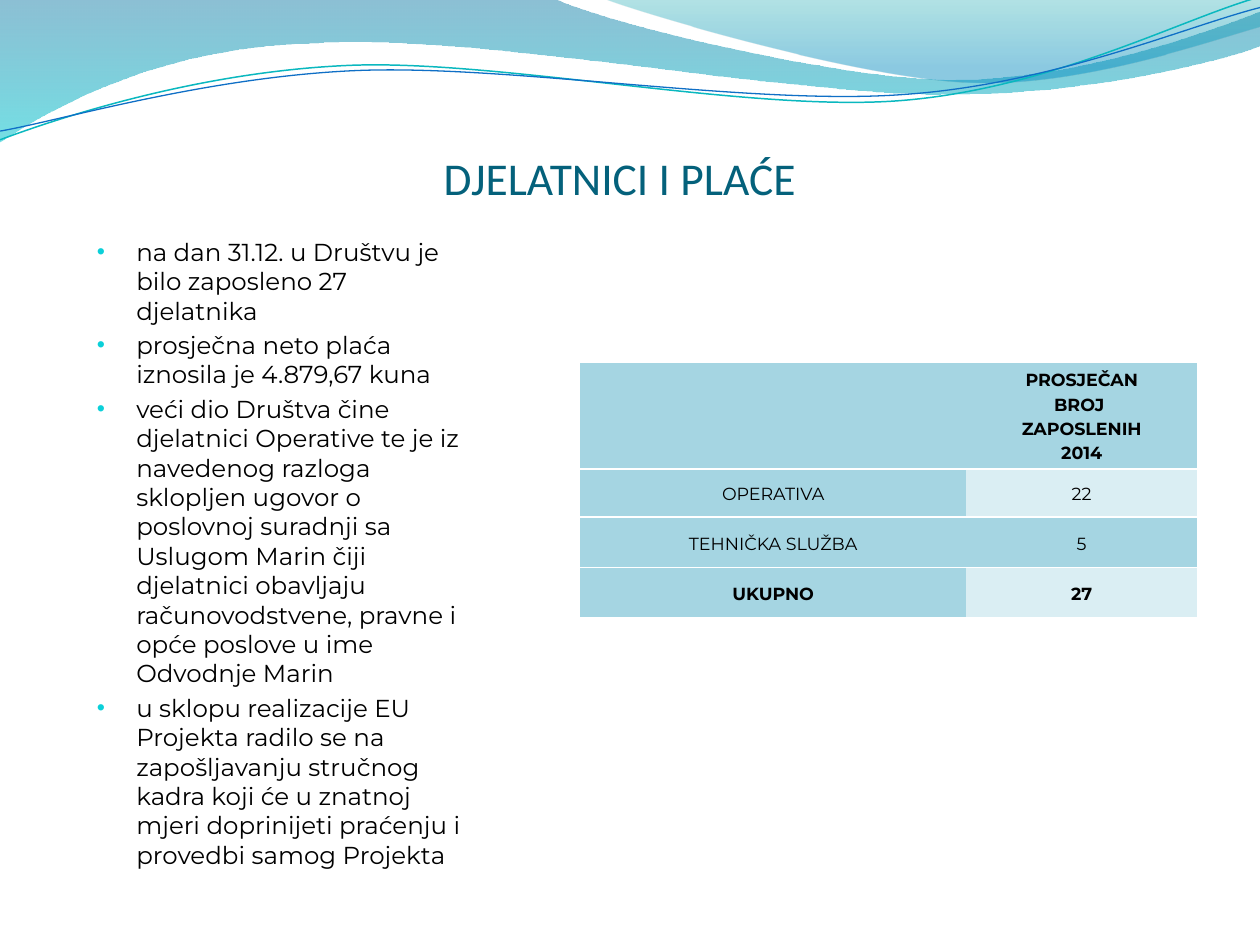
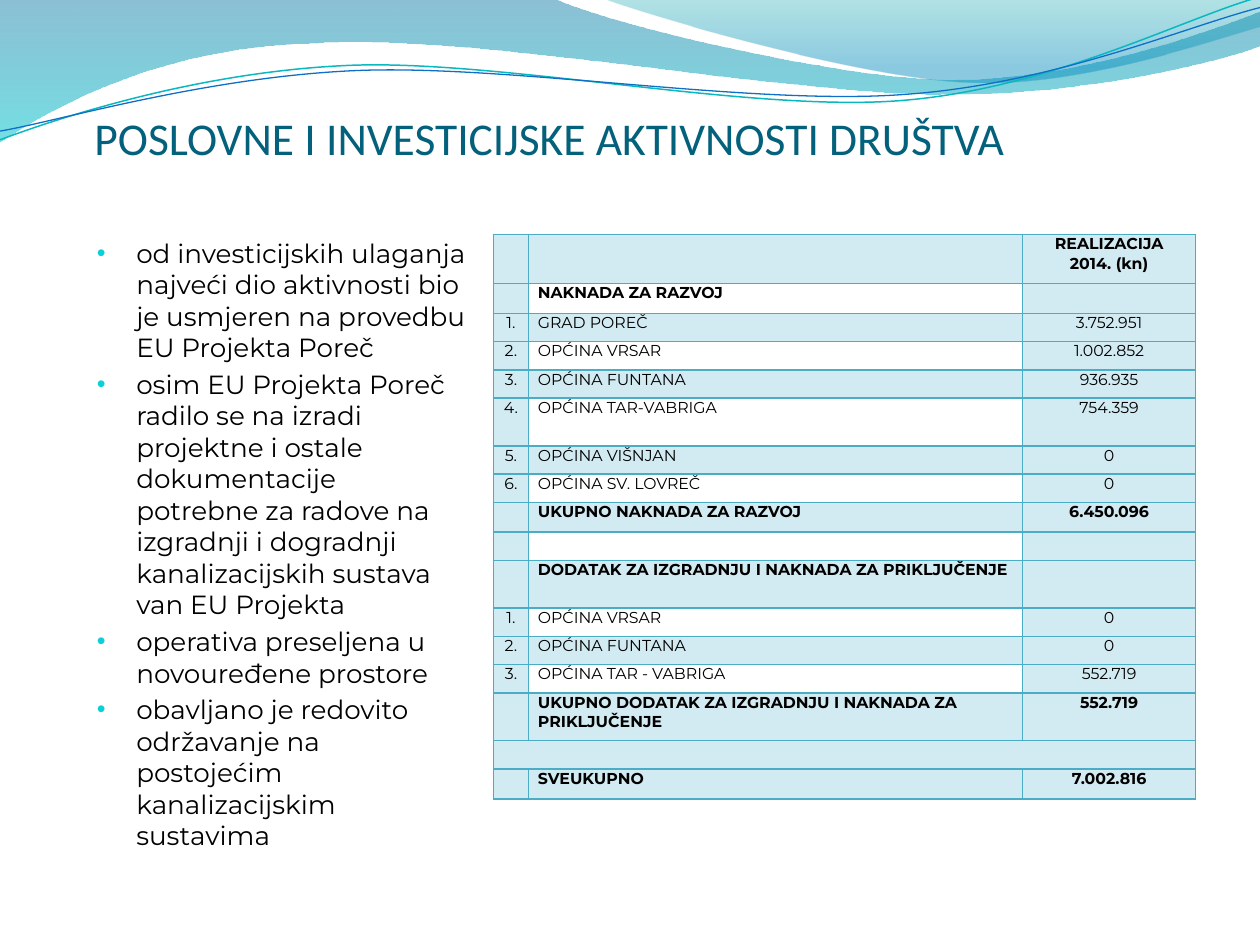
from lxml import etree
from pptx import Presentation
from pptx.dml.color import RGBColor
from pptx.enum import text
from pptx.oxml.ns import qn
from pptx.util import Pt

# ---- Shared style ----
COLORS = {
    "title": "04617B", "text": "000000", "bullet": "0BD0D9",
    "teal line": "0AB8BF", "blue line": "0F6FC6", "white": "FFFFFF",
    "staff dark": "A5D5E2", "staff light": "DAEEF3",
    "fees fill": "D2EAF1", "fees border": "4BACC6",
}
TITLE_FONT, BODY_FONT = "Calibri", "Montserrat"
CENTER, LEFT = text.PP_ALIGN.CENTER, text.PP_ALIGN.LEFT
TOP, MIDDLE, BOTTOM = text.MSO_ANCHOR.TOP, text.MSO_ANCHOR.MIDDLE, text.MSO_ANCHOR.BOTTOM
NO_STYLE = "{2D5ABB26-0587-4C30-8999-92F81FD0307C}"

# Waves: a start point, then straight (x, y) or cubic (x1, y1, x2, y2, x, y) steps
BANDS = [
    ([(0, 0), (316.8, -0.7), (342.7, 12.2, 478.1, 45.4, 545.8, 45.4),
      (614.2, 45.4, 689.8, 18.7, 720, 6.5), (720.7, 25.9),
      (707.8, 31.7, 626.4, 54.7, 537.1, 54), (447.8, 54, 275, 20.2, 185, 24.5),
      (92.9, 25.9, 33.1, 59.8, -0.7, 81.4)],
     [(0, "0074A1", 45), (1, "00C6CF", 55)]),
    ([(344.9, -0.7), (366.5, 7.9, 491, 44.6, 553.7, 46.8),
      (616.3, 49.7, 691.9, 23, 720, 15.1), (720, 0)],
     [(0, "00A1A9", 30), (0.8, "008BBF", 45)]),
]
LINES = [
    ([(0, 79.9), (34.6, 67, 113.8, 41, 199.4, 37.4),
      (284.4, 33.8, 427, 64.1, 513.4, 57.6), (599.8, 51.1, 675.4, 10.8, 718.6, -1.4)],
     "teal line", 0.85),
    ([(0, 74.9), (33.8, 69.1, 118.1, 43.9, 203.8, 40.3),
      (290.2, 36.7, 429.8, 60.5, 516.2, 54), (601.9, 48.2, 677.5, 15.1, 720, 4.3)],
     "blue line", 0.75),
]

# ---- Content ----
STAFF_TITLE = "DJELATNICI I PLAĆE"
STAFF_POINTS = [
    "na dan 31.12. u Društvu je bilo zaposleno 27 djelatnika",
    "prosječna neto plaća iznosila je 4.879,67 kuna",
    "veći dio Društva čine djelatnici Operative te je iz navedenog razloga sklopljen "
    "ugovor o poslovnoj suradnji sa Uslugom Marin čiji djelatnici obavljaju "
    "računovodstvene, pravne i opće poslove u ime Odvodnje Marin",
    "u sklopu realizacije EU Projekta radilo se na zapošljavanju stručnog kadra koji će "
    "u znatnoj mjeri doprinijeti praćenju i provedbi samog Projekta",
]
STAFF_ROWS = [  # height, bold, cells
    (60.8, True, ("", "PROSJEČAN\nBROJ \vZAPOSLENIH\n2014")),
    (27.6, False, ("OPERATIVA", "22")),
    (28.8, False, ("TEHNIČKA SLUŽBA", "5")),
    (28.8, True, ("UKUPNO", "27")),
]

FEES_TITLE = "POSLOVNE I INVESTICIJSKE AKTIVNOSTI DRUŠTVA"
FEES_POINTS = [
    "od investicijskih ulaganja najveći dio aktivnosti bio je usmjeren na provedbu "
    "EU Projekta Poreč",
    "osim EU Projekta Poreč radilo se na izradi projektne i ostale dokumentacije\v"
    "potrebne za radove na izgradnji i dogradnji kanalizacijskih sustava van EU Projekta",
    "operativa preseljena u novouređene prostore",
    "obavljano je redovito održavanje na postojećim kanalizacijskim sustavima",
]
ROW, SUM_ROW, TALL_ROW = 16.15, 17.1, 27.3
FEES_ROWS = [
    (28, True, ("", "", "REALIZACIJA 2014. (kn)")),
    (SUM_ROW, True, ("", "NAKNADA ZA RAZVOJ", "")),
    (ROW, False, ("1.", "GRAD POREČ", "3.752.951")),
    (ROW, False, ("2.", "OPĆINA VRSAR", "1.002.852")),
    (ROW, False, ("3.", "OPĆINA FUNTANA", "936.935")),
    (TALL_ROW, False, ("4.", "OPĆINA TAR-VABRIGA", "754.359")),
    (ROW, False, ("5.", "OPĆINA VIŠNJAN", "0")),
    (ROW, False, ("6.", "OPĆINA SV. LOVREČ", "0")),
    (SUM_ROW, True, ("", "UKUPNO NAKNADA ZA RAZVOJ", "6.450.096")),
    (ROW, False, ("", "", "")),
    (TALL_ROW, True, ("", "DODATAK ZA IZGRADNJU I NAKNADA ZA PRIKLJUČENJE", "")),
    (ROW, False, ("1.", "OPĆINA VRSAR", "0")),
    (ROW, False, ("2.", "OPĆINA FUNTANA", "0")),
    (ROW, False, ("3.", "OPĆINA TAR - VABRIGA", "552.719")),
    (TALL_ROW, True, ("", "UKUPNO DODATAK ZA IZGRADNJU I NAKNADA ZA PRIKLJUČENJE", "552.719")),
    (ROW, False, ("", "", "")),
    (SUM_ROW, True, ("", "SVEUKUPNO", "7.002.816")),
]
FEES_GAP_ROW = 15  # one cell across the whole table


# ---- Helpers ----
def rgb(name):
    return RGBColor.from_string(COLORS[name])


def add_wave(s, steps, close):
    """Freeform through the end points, with the cubic steps then bent."""
    start, *rest = [(Pt(step[-2]), Pt(step[-1])) for step in steps]
    builder = s.shapes.build_freeform(*start)
    builder.add_line_segments(rest, close=close)
    sp = builder.convert_to_shape()
    sp.shadow.inherit = False
    segments = list(sp.element.spPr.iter(qn("a:lnTo")))
    for segment, step in zip(segments, steps[1:]):
        if len(step) == 6:
            curve = etree.Element(qn("a:cubicBezTo"))
            for x, y in zip(step[::2], step[1::2]):
                etree.SubElement(curve, qn("a:pt"),
                                 x=str(Pt(x) - sp.left), y=str(Pt(y) - sp.top))
            segment.getparent().replace(segment, curve)
    return sp


def add_waves(s):
    for steps, stops in BANDS:
        sp = add_wave(s, steps, True)
        sp.line.fill.background()
        sp.fill.gradient()
        sp.fill.gradient_angle = 270
        for stop, (position, color, _) in zip(sp.fill.gradient_stops, stops):
            stop.position = position
            stop.color.rgb = RGBColor.from_string(color)
        for clr, (_, _, opacity) in zip(sp.element.spPr.iter(qn("a:srgbClr")), stops):
            etree.SubElement(clr, qn("a:alpha"), val=str(opacity * 1000))
    for steps, color, width in LINES:
        sp = add_wave(s, steps, False)
        sp.fill.background()
        sp.line.color.rgb = rgb(color)
        sp.line.width = Pt(width)


def set_insets(target, left, top, right, bottom):
    target.margin_left, target.margin_top = Pt(left), Pt(top)
    target.margin_right, target.margin_bottom = Pt(right), Pt(bottom)


def style_runs(p, font, size, color="text", bold=False):
    for r in p.runs:
        r.font.name, r.font.size, r.font.bold = font, Pt(size), bold
        r.font.color.rgb = rgb(color)


def add_text(s, box, content, insets, anchor):
    tf = s.shapes.add_textbox(*map(Pt, box)).text_frame
    tf.word_wrap = True
    tf.vertical_anchor = anchor
    set_insets(tf, *insets)
    tf.text = content
    return tf.paragraphs


def add_title(s, title, box, align):
    p = add_text(s, box, title, (0, 3.6, 0, 0), BOTTOM)[0]
    p.alignment = align
    style_runs(p, TITLE_FONT, 26, "title")


def add_points(s, points, size):
    for p in add_text(s, (54, 131.8, 216, 360), "\n".join(points),
                      (1.4, 3.6, 1.4, 3.6), TOP):
        p.space_before = Pt(size / 5)
        style_runs(p, BODY_FONT, size)
        pPr = p._p.get_or_add_pPr()
        pPr.set("marL", str(Pt(22.5)))
        pPr.set("indent", str(-Pt(22.5)))
        clr = etree.SubElement(pPr, qn("a:buClr"))
        etree.SubElement(clr, qn("a:srgbClr"), val=COLORS["bullet"])
        etree.SubElement(pPr, qn("a:buSzPct"), val="95000")
        etree.SubElement(pPr, qn("a:buFont"), typeface="Arial")
        etree.SubElement(pPr, qn("a:buChar"), char="•")


def set_borders(cell, sides, color):
    tcPr = cell._tc.get_or_add_tcPr()
    for i, side in enumerate(sides):
        ln = etree.Element(qn("a:ln" + side), w=str(Pt(1)))
        fill = etree.SubElement(ln, qn("a:solidFill"))
        etree.SubElement(fill, qn("a:srgbClr"), val=COLORS[color])
        tcPr.insert(i, ln)


def add_table(s, origin, widths, rows, size, inset, anchor, spacing,
              align_of, fill_of, sides, border):
    heights = [height for height, _, _ in rows]
    frame = s.shapes.add_table(len(rows), len(widths), *map(
        Pt, (*origin, sum(widths), sum(heights))))
    table = frame.table
    table.first_row = table.horz_banding = False
    table._tbl.tblPr.find(qn("a:tableStyleId")).text = NO_STYLE
    for column, width in zip(table.columns, widths):
        column.width = Pt(width)
    for i, (height, bold, values) in enumerate(rows):
        table.rows[i].height = Pt(height)
        for j, value in enumerate(values):
            cell = table.cell(i, j)
            cell.text_frame.text = value
            cell.vertical_anchor = anchor
            set_insets(cell, inset, 0, inset, 0)
            for p in cell.text_frame.paragraphs:
                p.alignment = align_of(j)
                p.line_spacing = spacing
                style_runs(p, BODY_FONT, size, bold=bold)
                if not value:  # keeps empty rows low
                    etree.SubElement(p._p, qn("a:endParaRPr"), sz=str(size * 100))
            fill = fill_of(i, j)
            if fill:
                cell.fill.solid()
                cell.fill.fore_color.rgb = rgb(fill)
            else:
                cell.fill.background()
            set_borders(cell, sides, border)
    return table


def staff_fill(i, j):
    return "staff light" if j == 1 and i % 2 else "staff dark"


def fees_fill(i, j):
    return None if j == 1 and i % 2 and i != FEES_GAP_ROW else "fees fill"


# ---- Slides ----
def main():
    prs = Presentation()
    prs.slide_width, prs.slide_height = Pt(720), Pt(540)
    staff, fees = (prs.slides.add_slide(prs.slide_layouts[6]) for _ in range(2))

    # Staff and pay
    add_waves(staff)
    add_title(staff, STAFF_TITLE, (54, 54.4, 600.5, 62.4), CENTER)
    add_points(staff, STAFF_POINTS, 14)
    add_table(staff, (331.6, 207.1), (220.4, 132.2), STAFF_ROWS, 10, 3.6, MIDDLE, 1.15,
              lambda j: CENTER, staff_fill, "TB", "white")

    # Business and investment
    add_waves(fees)
    add_title(fees, FEES_TITLE, (54, 40.3, 584, 54), LEFT)
    add_points(fees, FEES_POINTS, 15)
    table = add_table(fees, (282, 134), (20, 282.4, 98.8), FEES_ROWS, 9, 5.4, TOP, 1.0,
                      lambda j: LEFT if j == 1 else CENTER, fees_fill, "LRTB", "fees border")
    table.cell(FEES_GAP_ROW, 0).merge(table.cell(FEES_GAP_ROW, 2))

    prs.save("out.pptx")


if __name__ == "__main__":
    main()
